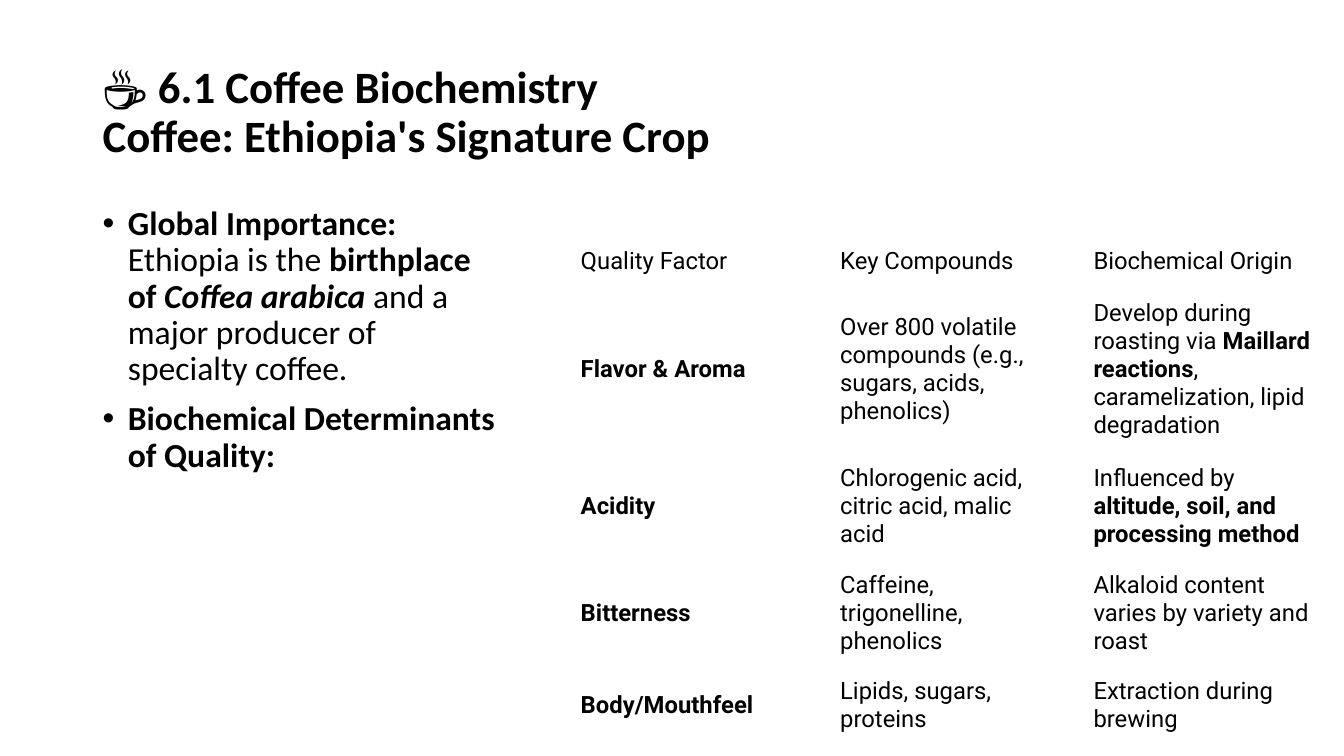
from dataclasses import dataclass

from lxml import etree
from pptx import Presentation
from pptx import util as u
from pptx.dml.color import RGBColor
from pptx.enum import text
from pptx.oxml import ns


@dataclass(frozen=True)
class Theme:
    ink: RGBColor = RGBColor(0, 0, 0)
    paper: RGBColor = RGBColor(255, 255, 255)
    text_font: str = "Calibri"
    table_font: str = "Roboto"
    title_size: int = 32
    body_size: int = 24
    table_size: int = 17


THEME = Theme()

# Each text is a list of (wording, style) runs: "b" is bold, "i" is italic
TITLE_LINES = ["☕ 6.1 Coffee Biochemistry", "Coffee: Ethiopia's Signature Crop"]
BULLETS = [
    [("Global Importance:", "b"), (" Ethiopia is the ", ""),
     ("birthplace of ", "b"), ("Coffea arabica", "bi"),
     (" and a major producer of specialty coffee.", "")],
    [("Biochemical Determinants of Quality:", "b")],
]
QUALITY_ROWS = [
    [[("Quality Factor", "")], [("Key Compounds", "")], [("Biochemical Origin", "")]],
    [[("Flavor & Aroma", "b")],
     [("Over 800 volatile compounds (e.g., sugars, acids, phenolics)", "")],
     [("Develop during roasting via ", ""), ("Maillard reactions", "b"),
      (", caramelization, lipid degradation", "")]],
    [[("Acidity", "b")],
     [("Chlorogenic acid, citric acid, malic acid", "")],
     [("Influenced by ", ""), ("altitude, soil, and processing method", "b")]],
    [[("Bitterness", "b")],
     [("Caffeine, trigonelline, phenolics", "")],
     [("Alkaloid content varies by variety and roast", "")]],
    [[("Body/Mouthfeel", "b")],
     [("Lipids, sugars, proteins", "")],
     [("Extraction during brewing", "")]],
]
ROW_HEIGHTS = [0.49, 1.65, 1.07, 0.78, 0.78]


def add_runs(paragraph, runs, font_name, size):
    for wording, style in runs:
        run = paragraph.add_run()
        run.text = wording
        run.font.name = font_name
        run.font.size = u.Pt(size)
        run.font.color.rgb = THEME.ink
        run.font.bold = "b" in style
        run.font.italic = "i" in style


def add_text_frame(slide, box):
    frame = slide.shapes.add_textbox(*map(u.Inches, box)).text_frame
    frame.word_wrap = True
    return frame


def add_bullet(paragraph, indent):
    properties = paragraph._p.get_or_add_pPr()
    properties.set("marL", str(u.Inches(indent)))
    properties.set("indent", str(u.Inches(-indent)))
    etree.SubElement(properties, ns.qn("a:buFont")).set("typeface", "Arial")
    etree.SubElement(properties, ns.qn("a:buChar")).set("char", "•")


def add_title(slide, box):
    frame = add_text_frame(slide, box)
    frame.vertical_anchor = text.MSO_ANCHOR.MIDDLE
    paragraph = frame.paragraphs[0]
    paragraph.line_spacing = 0.9
    for index, line in enumerate(TITLE_LINES):
        if index:
            paragraph.add_line_break()
        add_runs(paragraph, [(line, "b")], THEME.text_font, THEME.title_size)


def add_bullet_list(slide, box):
    frame = add_text_frame(slide, box)
    for index, runs in enumerate(BULLETS):
        paragraph = frame.add_paragraph() if index else frame.paragraphs[0]
        add_bullet(paragraph, 0.25)
        paragraph.line_spacing = 0.9
        if index:
            paragraph.space_before = u.Pt(10)
        add_runs(paragraph, runs, THEME.text_font, THEME.body_size)


def add_quality_table(slide, box):
    column_count = len(QUALITY_ROWS[0])
    frame = slide.shapes.add_table(len(QUALITY_ROWS), column_count, *map(u.Inches, box))
    table = frame.table
    table.first_row = table.horz_banding = False
    for column in table.columns:
        column.width = u.Inches(box[2] / column_count)
    for row_index, cells in enumerate(QUALITY_ROWS):
        table.rows[row_index].height = u.Inches(ROW_HEIGHTS[row_index])
        for column_index, runs in enumerate(cells):
            cell = table.cell(row_index, column_index)
            cell.fill.background()
            cell.vertical_anchor = text.MSO_ANCHOR.MIDDLE
            # Outer edges are tighter than the gaps between columns
            at_right_edge = row_index > 0 and column_index == column_count - 1
            cell.margin_left = u.Inches(0.16 if column_index else 0.1)
            cell.margin_right = u.Inches(0.1 if at_right_edge else 0.16)
            cell.margin_top = cell.margin_bottom = u.Inches(0.1)
            add_runs(cell.text_frame.paragraphs[0], runs,
                     THEME.table_font, THEME.table_size)


def main():
    presentation = Presentation()
    presentation.slide_width = u.Inches(13.33)
    presentation.slide_height = u.Inches(7.5)
    slide = presentation.slides.add_slide(presentation.slide_layouts[6])
    slide.background.fill.solid()
    slide.background.fill.fore_color.rgb = THEME.paper

    # Heading, then bullets beside the table
    add_title(slide, (0.92, 0.4, 11.5, 1.45))
    add_bullet_list(slide, (0.92, 2, 4.11, 4.76))
    add_quality_table(slide, (5.66, 2.35, 7.54, sum(ROW_HEIGHTS)))
    presentation.save("out.pptx")


if __name__ == "__main__":
    main()
